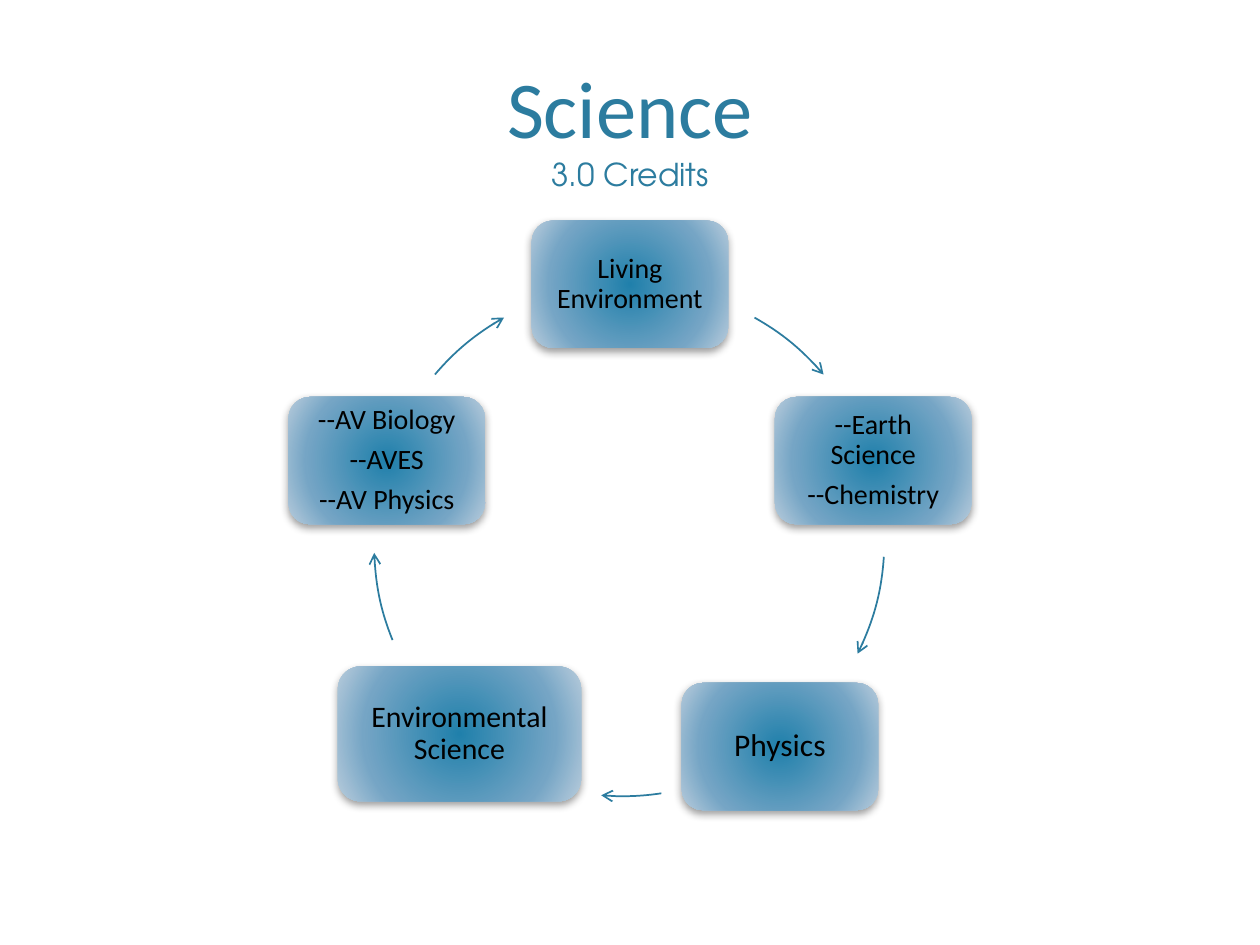
from typing import NamedTuple

from lxml.etree import SubElement
from pptx import Presentation
from pptx.dml.color import RGBColor
from pptx.enum.shapes import MSO_SHAPE
from pptx.enum.text import MSO_ANCHOR, PP_ALIGN
from pptx.oxml.ns import qn
from pptx.slide import Slide
from pptx.util import Pt

TEAL = RGBColor(0x2C, 0x7C, 0x9F)
BLACK = RGBColor(0x00, 0x00, 0x00)
GRADIENT = (
    (0, RGBColor(0x20, 0x80, 0xAB)),
    (69, RGBColor(0x75, 0xA5, 0xC5)),
    (100, RGBColor(0xB8, 0xCC, 0xDC)),
)
BODY_FONT = "Calibri"
CREDIT_FONT = "TeX Gyre Adventor"
RING_DIAMETER = 291.6
PERCENT = 1000
DEGREE = 60000


class Course(NamedTuple):
    center_x: float
    center_y: float
    lines: tuple[str, ...]
    size: float = 16
    width: float = 112.3
    height: float = 72.7


class CycleArrow(NamedTuple):
    """Clockwise arc on the ring, with angles in degrees from three o'clock."""
    start: float
    end: float
    left: float = 213.8
    top: float = 162.7


COURSES = (
    Course(360, 162.4, ("Living Environment",)),
    Course(499, 263.2, ("--Earth Science", "--Chemistry")),
    Course(445.7, 426.6, ("Physics",), size=18),
    Course(262.6, 419.4, ("Environmental Science",), size=17, width=139, height=77),
    Course(221, 263.2, ("--AV Biology", "--AVES", "--AV Physics")),
)
ARROWS = (
    CycleArrow(299.4, 319.6),
    CycleArrow(3.8, 26.5),
    CycleArrow(81.35, 94.9, left=210.2, top=163.4),
    CycleArrow(158.1, 178.2, top=165.6),
    CycleArrow(220.4, 240.6),
)


def set_values(target, values: dict) -> None:
    for name, value in values.items():
        setattr(target, name, value)


def add_run(paragraph, text: str, font: str, size: float, color: RGBColor) -> None:
    run = paragraph.add_run()
    run.text = text
    set_values(run.font, {"name": font, "size": Pt(size)})
    run.font.color.rgb = color


def add_color(parent, color: RGBColor):
    return SubElement(parent, qn("a:srgbClr"), val=str(color))


def apply_radial_gradient(shape) -> None:
    shape.fill.gradient()
    gradient = shape._element.spPr.find(qn("a:gradFill"))
    for child in list(gradient):
        gradient.remove(child)
    stops = SubElement(gradient, qn("a:gsLst"))
    for position, color in GRADIENT:
        add_color(SubElement(stops, qn("a:gs"), pos=str(position * PERCENT)), color)
    radial = SubElement(gradient, qn("a:path"), path="circle")
    edges = {side: str(100 * PERCENT) for side in "ltrb"}
    SubElement(radial, qn("a:fillToRect"), **edges)


def apply_shadow(shape) -> None:
    shape.shadow.inherit = False
    effects = shape._element.spPr.find(qn("a:effectLst"))
    shadow = SubElement(
        effects, qn("a:outerShdw"), blurRad=str(Pt(5)), dist=str(Pt(2)),
        dir=str(90 * DEGREE), rotWithShape="0",
    )
    SubElement(add_color(shadow, BLACK), qn("a:alpha"), val=str(40 * PERCENT))


def add_title(slide: Slide) -> None:
    title = slide.shapes.add_textbox(Pt(43.2), Pt(8.6), Pt(633.6), Pt(105.1))
    set_values(title.text_frame, {"word_wrap": True, "vertical_anchor": MSO_ANCHOR.BOTTOM})
    paragraph = title.text_frame.paragraphs[0]
    paragraph.alignment = PP_ALIGN.CENTER
    add_run(paragraph, "Science", BODY_FONT, 46, TEAL)
    paragraph.add_line_break()
    add_run(paragraph, "3.0 Credits", CREDIT_FONT, 18, TEAL)


def add_course(slide: Slide, course: Course) -> None:
    shape = slide.shapes.add_shape(
        MSO_SHAPE.ROUNDED_RECTANGLE,
        Pt(course.center_x - course.width / 2), Pt(course.center_y - course.height / 2),
        Pt(course.width), Pt(course.height),
    )
    apply_radial_gradient(shape)
    shape.line.fill.background()
    apply_shadow(shape)
    frame = shape.text_frame
    margins = {f"margin_{side}": Pt(5) for side in ("left", "top", "right", "bottom")}
    set_values(frame, {"word_wrap": True, "vertical_anchor": MSO_ANCHOR.MIDDLE, **margins})
    for index, line in enumerate(course.lines):
        paragraph = frame.add_paragraph() if index else frame.paragraphs[0]
        set_values(paragraph, {
            "alignment": PP_ALIGN.CENTER,
            "line_spacing": 0.9,
            "space_after": Pt(0.35 * course.size),
        })
        add_run(paragraph, line, BODY_FONT, course.size, BLACK)


def add_cycle_arrow(slide: Slide, arrow: CycleArrow) -> None:
    arc = slide.shapes.add_shape(
        MSO_SHAPE.ARC, Pt(arrow.left), Pt(arrow.top), Pt(RING_DIAMETER), Pt(RING_DIAMETER)
    )
    for index, angle in enumerate((arrow.start, arrow.end)):
        arc.adjustments[index] = angle * DEGREE / 100000
    arc.fill.background()
    arc.shadow.inherit = False
    arc.line.color.rgb = TEAL
    arc.line.width = Pt(1)
    SubElement(arc._element.spPr.find(qn("a:ln")), qn("a:tailEnd"), type="arrow")


def main() -> None:
    presentation = Presentation()
    set_values(presentation, {"slide_width": Pt(720), "slide_height": Pt(540)})
    slide = presentation.slides.add_slide(presentation.slide_layouts[6])
    add_title(slide)
    for course, arrow in zip(COURSES, ARROWS):
        add_course(slide, course)
        add_cycle_arrow(slide, arrow)
    presentation.save("out.pptx")


if __name__ == "__main__":
    main()
